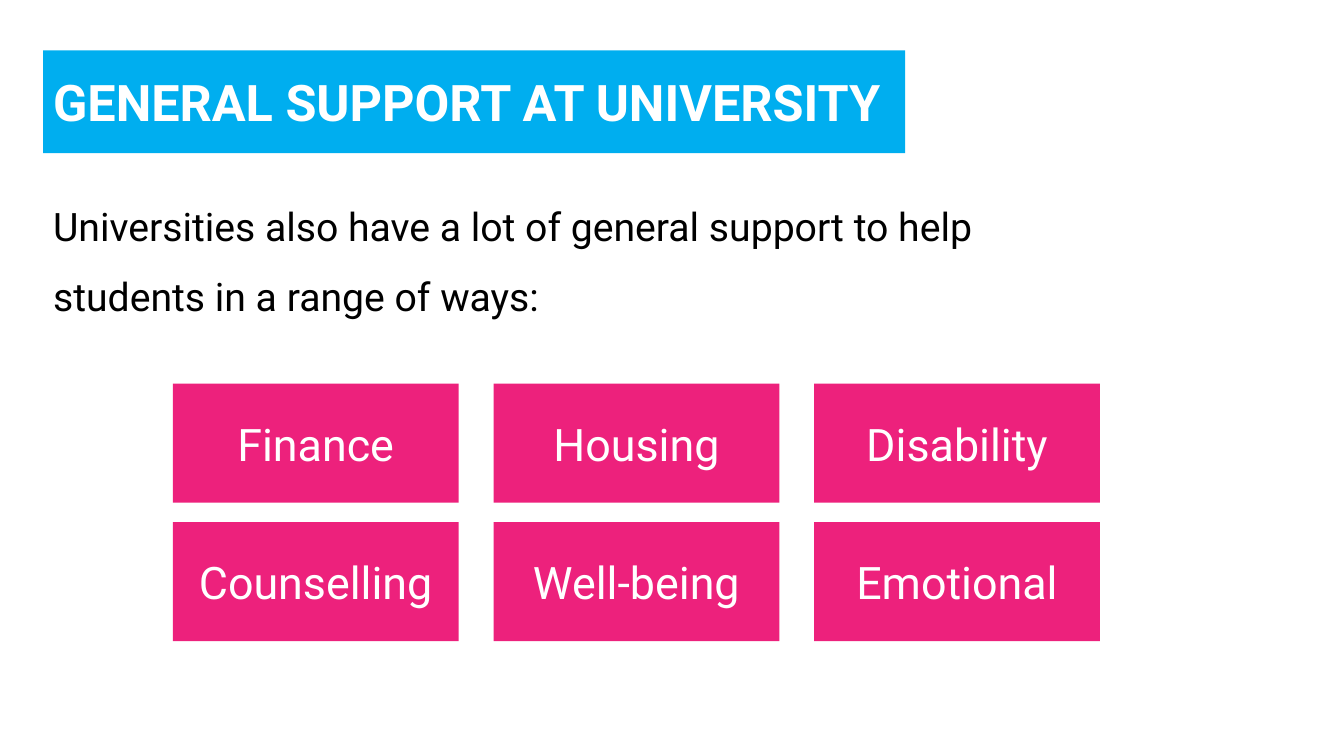
import pptx
import pptx.util
import pptx.dml.color
import pptx.enum.shapes
import pptx.enum.text

Cm = pptx.util.Cm
COLOURS = {"banner": "00AEEF", "card": "ED217C", "light": "FFFFFF", "dark": "000000"}
ALIGN = pptx.enum.text.PP_ALIGN

deck = pptx.Presentation()
deck.slide_width, deck.slide_height = Cm(33.87), Cm(19.05)
slide = deck.slides.add_slide(deck.slide_layouts[6])


def write(frame, text, size, colour, align=ALIGN.LEFT, bold=False):
    frame.word_wrap = True
    paragraph = frame.paragraphs[0]
    paragraph.alignment = align
    run = paragraph.add_run()
    run.text = text
    run.font.name = "Roboto"
    run.font.size = pptx.util.Pt(size)
    run.font.bold = bold
    run.font.color.rgb = pptx.dml.color.RGBColor.from_string(COLOURS[colour])
    return paragraph


def add_block(left, top, width, height, fill):
    block = slide.shapes.add_shape(
        pptx.enum.shapes.MSO_SHAPE.RECTANGLE, Cm(left), Cm(top), Cm(width), Cm(height))
    block.shadow.inherit = False
    block.fill.solid()
    block.fill.fore_color.rgb = pptx.dml.color.RGBColor.from_string(COLOURS[fill])
    block.line.fill.background()
    block.text_frame.vertical_anchor = pptx.enum.text.MSO_ANCHOR.MIDDLE
    return block.text_frame


# Title banner
banner = add_block(1.09, 1.27, 21.72, 2.59, "banner")
write(banner, "GENERAL SUPPORT AT UNIVERSITY", 36, "light", bold=True)

# Introduction
intro = slide.shapes.add_textbox(Cm(1.09), Cm(4.37), Cm(27.36), Cm(3.66)).text_frame
intro.auto_size = pptx.enum.text.MSO_AUTO_SIZE.SHAPE_TO_FIT_TEXT
sentence = write(
    intro,
    "Universities also have a lot of general support to help students in a range of ways:",
    28, "dark")
sentence.line_spacing = 1.5

# Grid of support areas
support_areas = [
    ["Finance", "Housing", "Disability"],
    ["Counselling", "Well-being", "Emotional"],
]
for row, areas in enumerate(support_areas):
    for column, area in enumerate(areas):
        card = add_block(4.36 + column * 8.08, 9.67 + row * 3.49, 7.2, 3, "card")
        write(card, area, 32, "light", align=ALIGN.CENTER)

deck.save("out.pptx")
